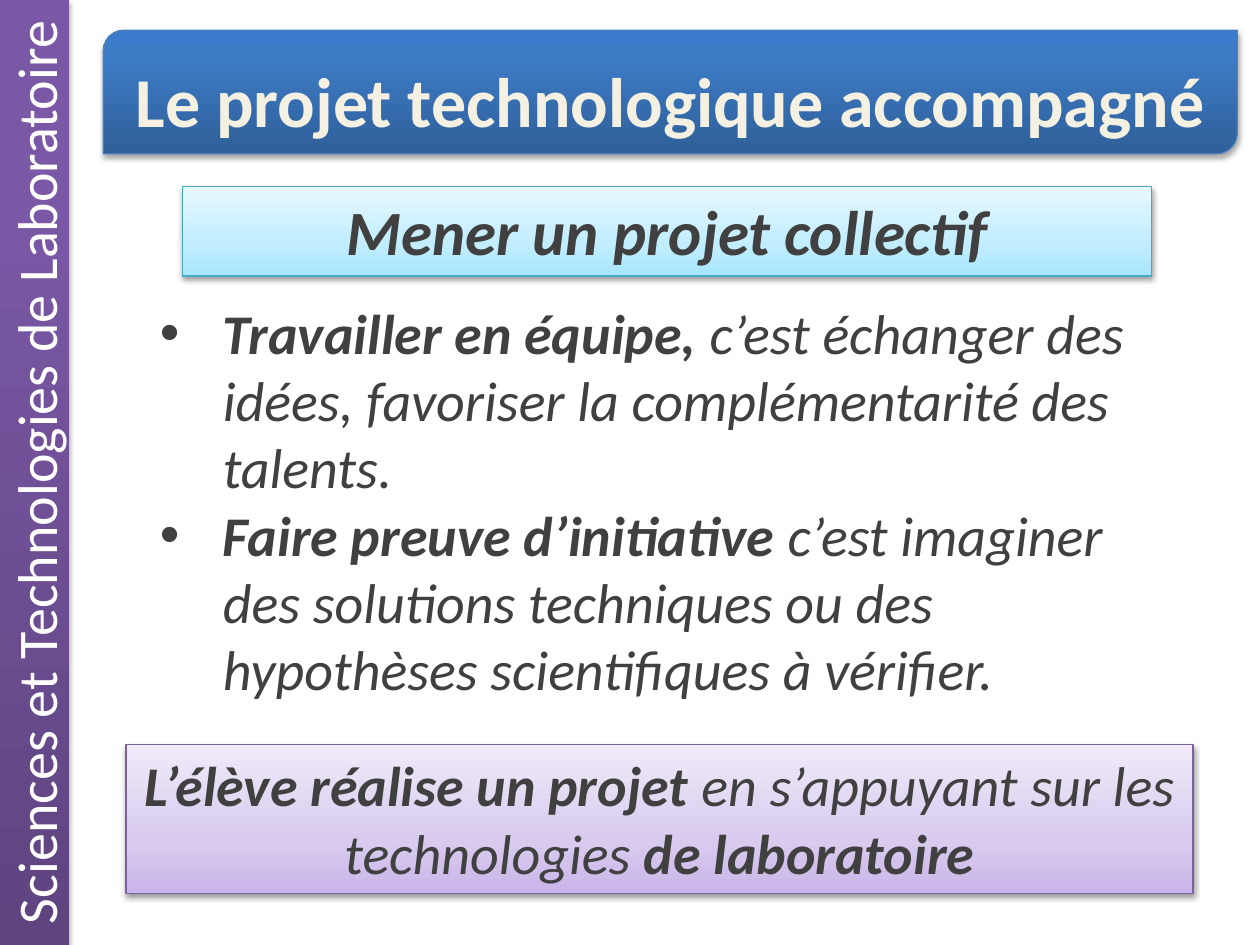
from dataclasses import dataclass

from lxml import etree
from pptx import Presentation, util as u
from pptx.dml.color import RGBColor
from pptx.enum import shapes, text
from pptx.oxml.ns import qn

WIDE, HIGH = u.Inches(10), u.Inches(7.5)
COLS, ROWS = 100, 75
KIND = shapes.MSO_SHAPE
MID = text.MSO_ANCHOR.MIDDLE


@dataclass(frozen=True)
class Theme:
    font: str = "Calibri"
    ink: str = "404040"
    white: str = "FFFFFF"
    cream: str = "F4F1E3"
    edge: str = "054697"
    title: int = 40
    head: int = 36
    body: int = 32
    # Gradient stops run from bottom to top.
    plum: tuple = ((0, "5F4480"), (80, "7B58A6"), (100, "7C57A8"))
    blue: tuple = ((0, "2F5F99"), (80, "3D7CC7"), (100, "3A7CCB"))
    sky: tuple = ((0, "A7E6FF"), (35, "C1EDFF"), (100, "E7F8FF"))
    lilac: tuple = ((0, "C9B5E8"), (35, "D8CBEE"), (100, "F0EAF9"))


T = Theme()


def grid(col, row, wide, high):
    """Turn columns and rows into slide lengths."""
    return (int(WIDE * col / COLS), int(HIGH * row / ROWS),
            int(WIDE * wide / COLS), int(HIGH * high / ROWS))


def node(top, tag, **attrs):
    return etree.SubElement(top, qn(tag), {k: str(v) for k, v in attrs.items()})


def tint(top, color, alpha):
    """Add a colour with an opacity in percent."""
    node(node(top, "a:srgbClr", val=color), "a:alpha", val=int(alpha * 1000))


def blend(shape, stops):
    shape.fill.gradient()
    shape.fill.gradient_angle = 90
    stack = shape.element.spPr.find(qn("a:gradFill")).find(qn("a:gsLst"))
    for old in list(stack):
        stack.remove(old)
    for pos, color in stops:
        node(node(stack, "a:gs", pos=pos * 1000), "a:srgbClr", val=color)


def shade(shape, alpha, drop):
    """Cast a soft shadow straight down."""
    shape.shadow.inherit = False
    cast = node(shape.element.spPr.find(qn("a:effectLst")), "a:outerShdw",
                blurRad=u.Pt(3.1), dist=u.Pt(drop), dir=5400000, rotWithShape=0)
    tint(cast, "000000", alpha)


def panel(slide, place, stops, line=None, kind=KIND.RECTANGLE, alpha=38, drop=1.6):
    shape = slide.shapes.add_shape(kind, *grid(*place))
    blend(shape, stops)
    if line:
        shape.line.color.rgb = RGBColor.from_string(line)
        shape.line.width = u.Pt(0.75)
    else:
        shape.line.fill.background()
    shade(shape, alpha, drop)
    return shape


def bullet(para):
    props = para._p.get_or_add_pPr()
    props.set("marL", str(u.Inches(0.5)))
    props.set("indent", str(-u.Inches(0.5)))
    node(props, "a:buFont", typeface="Arial")
    node(props, "a:buChar", char="•")


def trace(run):
    """Give the letters a faint outline."""
    line = etree.Element(qn("a:ln"), w=str(u.Pt(1)))
    tint(node(line, "a:solidFill"), T.edge, 6.5)
    run._r.get_or_add_rPr().insert(0, line)


def write(shape, *paras, size=T.body, color=T.ink, slant=True, anchor=None,
          center=True, dots=False, edge=False, grow=False):
    """Fill a shape with paragraphs, each a list of (words, bold) pairs."""
    frame = shape.text_frame
    frame.word_wrap = True
    frame.auto_size = (text.MSO_AUTO_SIZE.SHAPE_TO_FIT_TEXT if grow
                       else text.MSO_AUTO_SIZE.NONE)
    frame.vertical_anchor = anchor or text.MSO_ANCHOR.TOP
    for at, parts in enumerate(paras):
        para = frame.add_paragraph() if at else frame.paragraphs[0]
        para.alignment = text.PP_ALIGN.CENTER if center else text.PP_ALIGN.LEFT
        if dots:
            bullet(para)
        for words, bold in parts:
            run = para.add_run()
            run.text = words
            font = run.font
            font.name, font.size = T.font, u.Pt(size)
            font.bold, font.italic = bold, slant
            font.color.rgb = RGBColor.from_string(color)
            if edge:
                trace(run)


def main():
    deck = Presentation()
    deck.slide_width, deck.slide_height = WIDE, HIGH
    slide = deck.slides.add_slide(deck.slide_layouts[6])

    side = panel(slide, (0, 0, 5.5, ROWS), T.plum, alpha=35, drop=1.8)
    write(side, [("Sciences et Technologies de Laboratoire", False)],
          color=T.white, slant=False, anchor=MID)
    side.text_frame._txBody.bodyPr.set("vert", "vert270")

    head = panel(slide, (14.5, 14.8, 76.9, 7.1), T.sky, "46AAC5")
    write(head, [("Mener un projet collectif", True)], size=T.head, grow=True)

    title = panel(slide, (8.2, 2.4, 90, 9.8), T.blue, "4B7EBC",
                  KIND.ROUND_2_DIAG_RECTANGLE, alpha=35, drop=1.8)
    write(title, [("Le projet technologique accompagné", True)], size=T.title,
          color=T.cream, slant=False, anchor=text.MSO_ANCHOR.BOTTOM, edge=True)

    body = slide.shapes.add_textbox(*grid(11.7, 23.2, 83.1, 33.3))
    write(body,
          [("Travailler en équipe, ", True),
           ("c’est échanger des idées, favoriser la complémentarité des talents.",
            False)],
          [("Faire preuve d’initiative ", True),
           ("c’est imaginer des solutions techniques ou des hypothèses "
            "scientifiques à vérifier.", False)],
          center=False, dots=True, grow=True)

    foot = panel(slide, (10, 59.1, 84.7, 11.8), T.lilac, "7D60A0")
    write(foot, [("L’élève réalise un projet ", True),
                 ("en s’appuyant sur les technologies ", False),
                 ("de laboratoire", True)], grow=True)

    deck.save("out.pptx")


if __name__ == "__main__":
    main()
